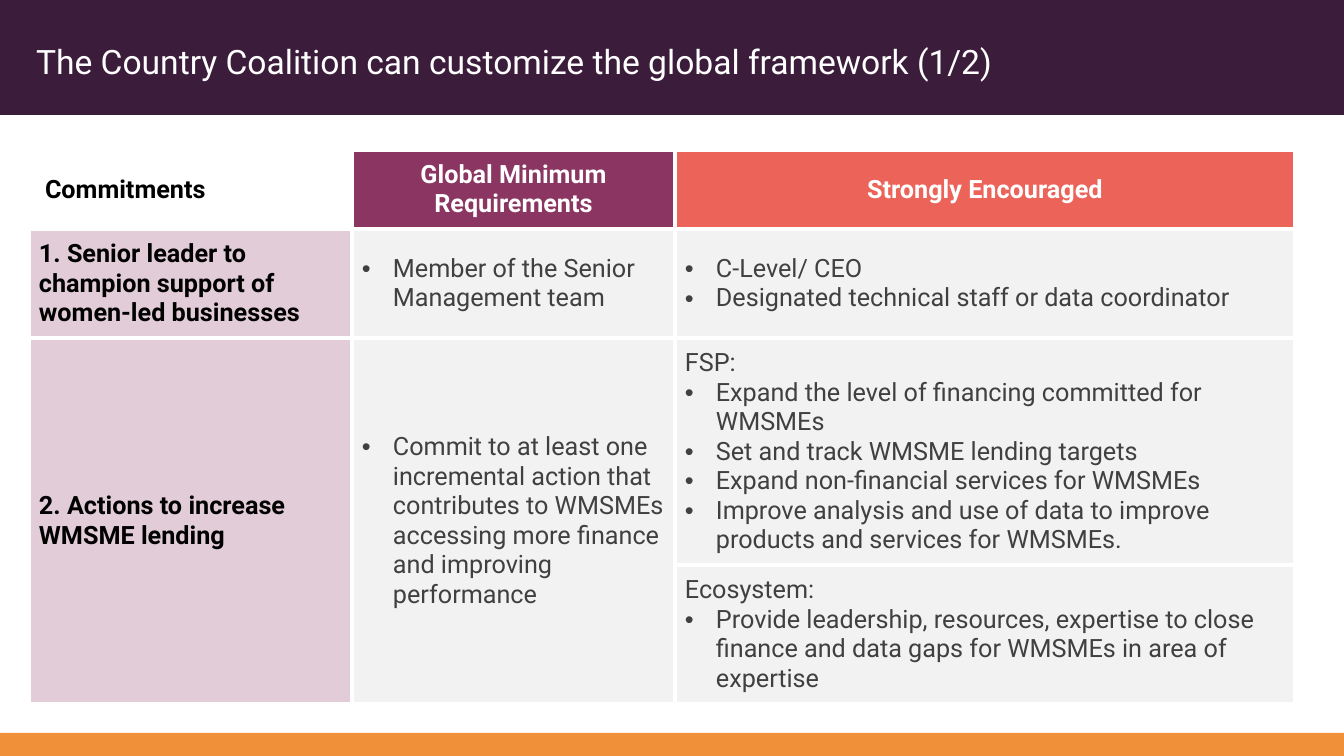
from lxml import etree
from pptx import Presentation
from pptx.dml.color import RGBColor
from pptx.enum.shapes import MSO_SHAPE
from pptx.enum.text import MSO_ANCHOR, MSO_AUTO_SIZE, PP_ALIGN
from pptx.oxml.ns import qn
from pptx.util import Emu, Pt

RECTANGLE = MSO_SHAPE.RECTANGLE
MIDDLE = MSO_ANCHOR.MIDDLE
LEFT, CENTER = PP_ALIGN.LEFT, PP_ALIGN.CENTER
NO_AUTOFIT = MSO_AUTO_SIZE.NONE

FONT = "Roboto"
WHITE, BLACK, GREY_TEXT = "FFFFFF", "000000", "404040"
PLUM, ORANGE = "3C1C3B", "F0913A"
BERRY, CORAL, ROSE, PALE = "8B3562", "EC6359", "E2CCD7", "F2F2F2"

SLIDE_W, SLIDE_H = 1344, 756
HEADER_H, FOOTER_H = 115, 23
CELL_INSET, BULLET_INDENT = 10, 31
COLUMNS = (323, 323, 620)
ROWS = (79, 109, 227, 139)
BULLET = "• "

HEADINGS = (
    ("Commitments", None, BLACK, LEFT),
    ("Global Minimum Requirements", BERRY, WHITE, CENTER),
    ("Strongly Encouraged", CORAL, WHITE, CENTER),
)
COMMITMENTS = {
    1: "1. Senior leader to champion support of women-led businesses",
    2: "2. Actions to increase WMSME lending",
}
DETAILS = {
    (1, 1): ["• Member of the Senior Management team"],
    (1, 2): ["• C-Level/ CEO", "• Designated technical staff or data coordinator"],
    (2, 1): ["• Commit to at least one incremental action that contributes to "
             "WMSMEs accessing more finance and improving performance"],
    (2, 2): ["FSP:",
             "• Expand the level of financing committed for WMSMEs",
             "• Set and track WMSME lending targets",
             "• Expand non-financial services for WMSMEs",
             "• Improve analysis and use of data to improve products and "
             "services for WMSMEs."],
    (3, 2): ["Ecosystem:",
             "• Provide leadership, resources, expertise to close finance and "
             "data gaps for WMSMEs in area of expertise"],
}


def px(length):
    return Emu(round(length * 914400 / 100.8))


def rgb(color):
    return RGBColor.from_string(color)


def style_paragraph(paragraph, size, color, bold=False, align=LEFT):
    paragraph.alignment = align
    font = paragraph.font
    font.name, font.size, font.bold = FONT, Pt(size), bold
    font.color.rgb = rgb(color)


def add_bullet(paragraph):
    properties = paragraph._p.get_or_add_pPr()
    properties.set("marL", str(px(BULLET_INDENT)))
    properties.set("indent", str(-px(BULLET_INDENT)))
    bullet_font = etree.Element(qn("a:buFont"), typeface="Arial")
    bullet_char = etree.Element(qn("a:buChar"), char=BULLET.strip())
    for position, element in enumerate((bullet_font, bullet_char)):
        properties.insert(position, element)


def add_borders(cell):
    """Draw white 3 pt lines on all four sides of the cell."""
    properties = cell._tc.get_or_add_tcPr()
    for position, side in enumerate(("lnL", "lnR", "lnT", "lnB")):
        line = etree.Element(qn(f"a:{side}"), w=str(Pt(3)))
        fill = etree.SubElement(line, qn("a:solidFill"))
        etree.SubElement(fill, qn("a:srgbClr"), val=WHITE)
        properties.insert(position, line)


def fill_cell(cell, lines, background, color, bold=False, align=LEFT):
    cell.vertical_anchor = MIDDLE
    cell.margin_left = cell.margin_right = px(CELL_INSET)
    cell.margin_top = cell.margin_bottom = px(CELL_INSET)
    if background:
        cell.fill.solid()
        cell.fill.fore_color.rgb = rgb(background)
    else:
        cell.fill.background()
    frame = cell.text_frame
    for number, line in enumerate(lines):
        paragraph = frame.add_paragraph() if number else frame.paragraphs[0]
        paragraph.text = line.removeprefix(BULLET)
        style_paragraph(paragraph, 18, color, bold, align)
        if line.startswith(BULLET):
            add_bullet(paragraph)


def add_band(slide, top, height, color):
    band = slide.shapes.add_shape(RECTANGLE, 0, px(top), px(SLIDE_W), px(height))
    band.shadow.inherit = False
    band.fill.solid()
    band.fill.fore_color.rgb = rgb(color)
    band.line.fill.background()


def place_title(slide, text, left, top, width, height):
    title = slide.shapes.title
    slide.shapes._spTree.append(title._element)  # in front of the header band
    title.left, title.top = px(left), px(top)
    title.width, title.height = px(width), px(height)
    frame = title.text_frame
    frame.text = text
    frame.word_wrap = True
    frame.auto_size = NO_AUTOFIT
    frame.vertical_anchor = MIDDLE
    frame.margin_left = px(23)
    paragraph = frame.paragraphs[0]
    paragraph.line_spacing = 1.2
    style_paragraph(paragraph, 24, WHITE)


def add_commitments_table(slide, left, top):
    table = slide.shapes.add_table(
        len(ROWS), len(COLUMNS), px(left), px(top), px(sum(COLUMNS)), px(sum(ROWS))
    ).table
    table.first_row = table.horz_banding = False
    for column, width in zip(table.columns, COLUMNS):
        column.width = px(width)
    for row, height in zip(table.rows, ROWS):
        row.height = px(height)
    for column in (0, 1):
        table.cell(2, column).merge(table.cell(3, column))

    for column, (heading, background, color, align) in enumerate(HEADINGS):
        fill_cell(table.cell(0, column), [heading], background, color, True, align)
    table.cell(0, 0).margin_left = px(CELL_INSET + 6)
    for row, commitment in COMMITMENTS.items():
        fill_cell(table.cell(row, 0), [commitment], ROSE, BLACK, True)
    for (row, column), lines in DETAILS.items():
        fill_cell(table.cell(row, column), lines, PALE, GREY_TEXT)
    for cell in table.iter_cells():
        add_borders(cell)


def main():
    deck = Presentation()
    deck.slide_width, deck.slide_height = px(SLIDE_W), px(SLIDE_H)
    slide = deck.slides.add_slide(deck.slide_layouts[5])
    add_band(slide, SLIDE_H - FOOTER_H, FOOTER_H, ORANGE)
    add_band(slide, 0, HEADER_H, PLUM)
    add_commitments_table(slide, 29, 150)
    place_title(slide, "The Country Coalition can customize the global framework (1/2)",
                13, 0, 1310, HEADER_H)
    deck.save("out.pptx")


if __name__ == "__main__":
    main()
